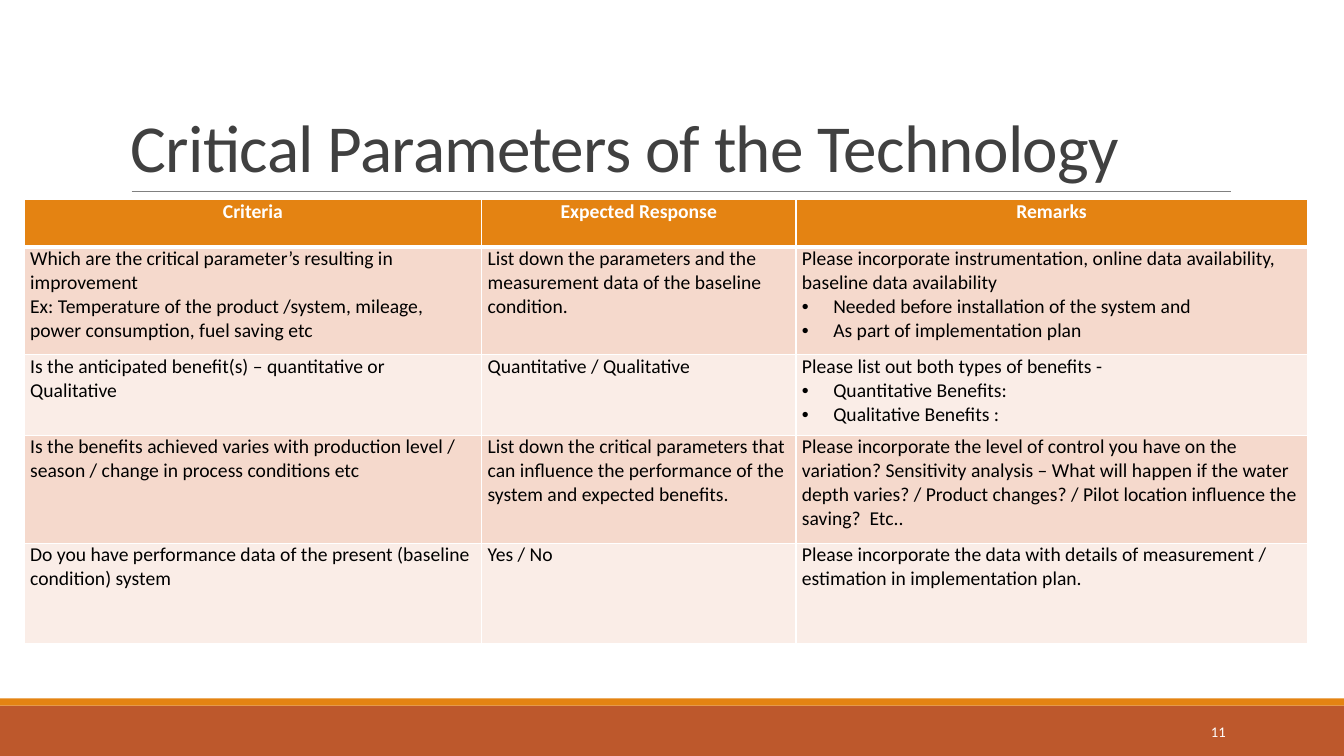
from lxml import etree
from pptx import Presentation, util as u
from pptx.dml.color import RGBColor
from pptx.enum import shapes, text
from pptx.oxml.ns import qn

COLOURS = {
    "orange": "E48312", "rust": "BD582C", "rule": "808080", "title": "404040",
    "white": "FFFFFF", "black": "000000", "dark band": "F5D9CC", "light band": "FAEDE7",
}
FONT = "Calibri"
BULLET = "• "
WIDTH, HEIGHT = 33.87, 19.05

COLUMN_WIDTHS = [11.53, 7.92, 12.88]
ROW_HEIGHTS = [1.19, 2.72, 2.03, 2.72, 2.54]
# Each cell is a list of paragraphs; a leading bullet marks a list item.
ROWS = [
    [["Criteria"], ["Expected Response"], ["Remarks"]],
    [["Which are the critical parameter’s resulting in improvement",
      "Ex: Temperature of the product /system, mileage, power consumption, fuel saving etc"],
     ["List down the parameters and the measurement data of the baseline condition."],
     ["Please incorporate instrumentation, online data availability, baseline data availability",
      "• Needed before installation of the system and",
      "• As part of implementation plan"]],
    [["Is the anticipated benefit(s) – quantitative or Qualitative"],
     ["Quantitative / Qualitative"],
     ["Please list out both types of benefits -",
      "• Quantitative Benefits:",
      "• Qualitative Benefits :"]],
    [["Is the benefits achieved varies with production level / season / "
      "change in process conditions etc"],
     ["List down the critical parameters that can influence the performance of the system "
      "and expected benefits."],
     ["Please incorporate the level of control you have on the variation? Sensitivity analysis – "
      "What will happen if the water depth varies? / Product changes? / "
      "Pilot location influence the saving?  Etc.."]],
    [["Do you have performance data of the present (baseline condition) system"],
     ["Yes / No"],
     ["Please incorporate the data with details of measurement / estimation "
      "in implementation plan."]],
]


def colour(name):
    return RGBColor.from_string(COLOURS[name])


def add_bullet(paragraph):
    properties = paragraph._p.get_or_add_pPr()
    indent = u.Cm(0.79)
    properties.set("marL", str(indent))
    properties.set("indent", str(-indent))
    etree.SubElement(properties, qn("a:buFont")).set("typeface", "Arial")
    etree.SubElement(properties, qn("a:buChar")).set("char", BULLET.strip())


def write(frame, paragraphs, size=14, ink="black", bold=False, align="LEFT",
          line_spacing=None, letter_spacing=None):
    """Fill a text frame with paragraphs in one format."""
    for index, words in enumerate(paragraphs):
        paragraph = frame.paragraphs[0] if index == 0 else frame.add_paragraph()
        paragraph.alignment = text.PP_ALIGN[align]
        if line_spacing:
            paragraph.line_spacing = line_spacing
        if words.startswith(BULLET):
            add_bullet(paragraph)
        run = paragraph.add_run()
        run.text = words.removeprefix(BULLET)
        font = run.font
        font.name, font.size, font.bold = FONT, u.Pt(size), bold
        font.color.rgb = colour(ink)
        if letter_spacing:
            run._r.get_or_add_rPr().set("spc", str(round(letter_spacing * 100)))


def add_text(slide, left, top, width, height, words, anchor, **text_format):
    box = slide.shapes.add_textbox(u.Cm(left), u.Cm(top), u.Cm(width), u.Cm(height))
    frame = box.text_frame
    frame.word_wrap = True
    frame.vertical_anchor = text.MSO_ANCHOR[anchor]
    write(frame, [words], **text_format)


def add_band(slide, top, height, fill):
    shape = slide.shapes.add_shape(
        shapes.MSO_SHAPE.RECTANGLE, 0, u.Cm(top), u.Cm(WIDTH), u.Cm(height))
    shape.shadow.inherit = False
    shape.fill.solid()
    shape.fill.fore_color.rgb = colour(fill)
    shape.line.fill.background()


def add_rule(slide, left, right, y):
    rule = slide.shapes.add_connector(
        shapes.MSO_CONNECTOR.STRAIGHT, u.Cm(left), u.Cm(y), u.Cm(right), u.Cm(y))
    rule.line.color.rgb = colour("rule")
    rule.line.width = u.Pt(0.5)
    etree.SubElement(rule._element.spPr, qn("a:effectLst"))


def set_borders(cell, widths):
    """Draw white borders; widths maps a side (L, R, T, B) to points."""
    properties = cell._tc.get_or_add_tcPr()
    for position, side in enumerate("LRTB"):
        line = etree.Element(qn(f"a:ln{side}"), w=str(u.Pt(widths[side])))
        fill = etree.SubElement(line, qn("a:solidFill"))
        etree.SubElement(fill, qn("a:srgbClr")).set("val", COLOURS["white"])
        properties.insert(position, line)


def add_criteria_table(slide, left, top):
    table = slide.shapes.add_table(
        len(ROWS), len(COLUMN_WIDTHS), u.Cm(left), u.Cm(top),
        u.Cm(sum(COLUMN_WIDTHS)), u.Cm(sum(ROW_HEIGHTS))).table
    for column, width in zip(table.columns, COLUMN_WIDTHS):
        column.width = u.Cm(width)
    for index, (row, height, contents) in enumerate(zip(table.rows, ROW_HEIGHTS, ROWS)):
        row.height = u.Cm(height)
        header = index == 0
        fill = "orange" if header else "dark band" if index % 2 else "light band"
        text_format = dict(ink="white", bold=True, align="CENTER") if header else {}
        for cell, paragraphs in zip(row.cells, contents):
            cell.margin_left = cell.margin_right = u.Cm(0.15)
            cell.margin_top = cell.margin_bottom = 0
            cell.fill.solid()
            cell.fill.fore_color.rgb = colour(fill)
            set_borders(cell, {"L": 1, "R": 1, "T": 3 if index == 1 else 1,
                               "B": 3 if header else 1})
            write(cell.text_frame, paragraphs, **text_format)


def main():
    presentation = Presentation()
    presentation.slide_width, presentation.slide_height = u.Cm(WIDTH), u.Cm(HEIGHT)
    slide = presentation.slides.add_slide(presentation.slide_layouts[6])

    # Footer bands and title rule
    add_band(slide, 17.78, 1.27, "rust")
    add_band(slide, 17.6, 0.18, "orange")
    add_rule(slide, 3.32, 31.01, 4.83)

    # Title and page number
    add_text(slide, 3.05, 0.79, 27.94, 4.04, "Critical Parameters of the Technology", "BOTTOM",
             size=48, ink="title", line_spacing=0.85, letter_spacing=-0.5)
    add_text(slide, 27.51, 17.93, 3.63, 1.02, "11", "MIDDLE",
             size=10.5, ink="white", align="RIGHT")

    # Criteria table
    add_criteria_table(slide, 0.61, 5.03)

    presentation.save("out.pptx")


if __name__ == "__main__":
    main()
